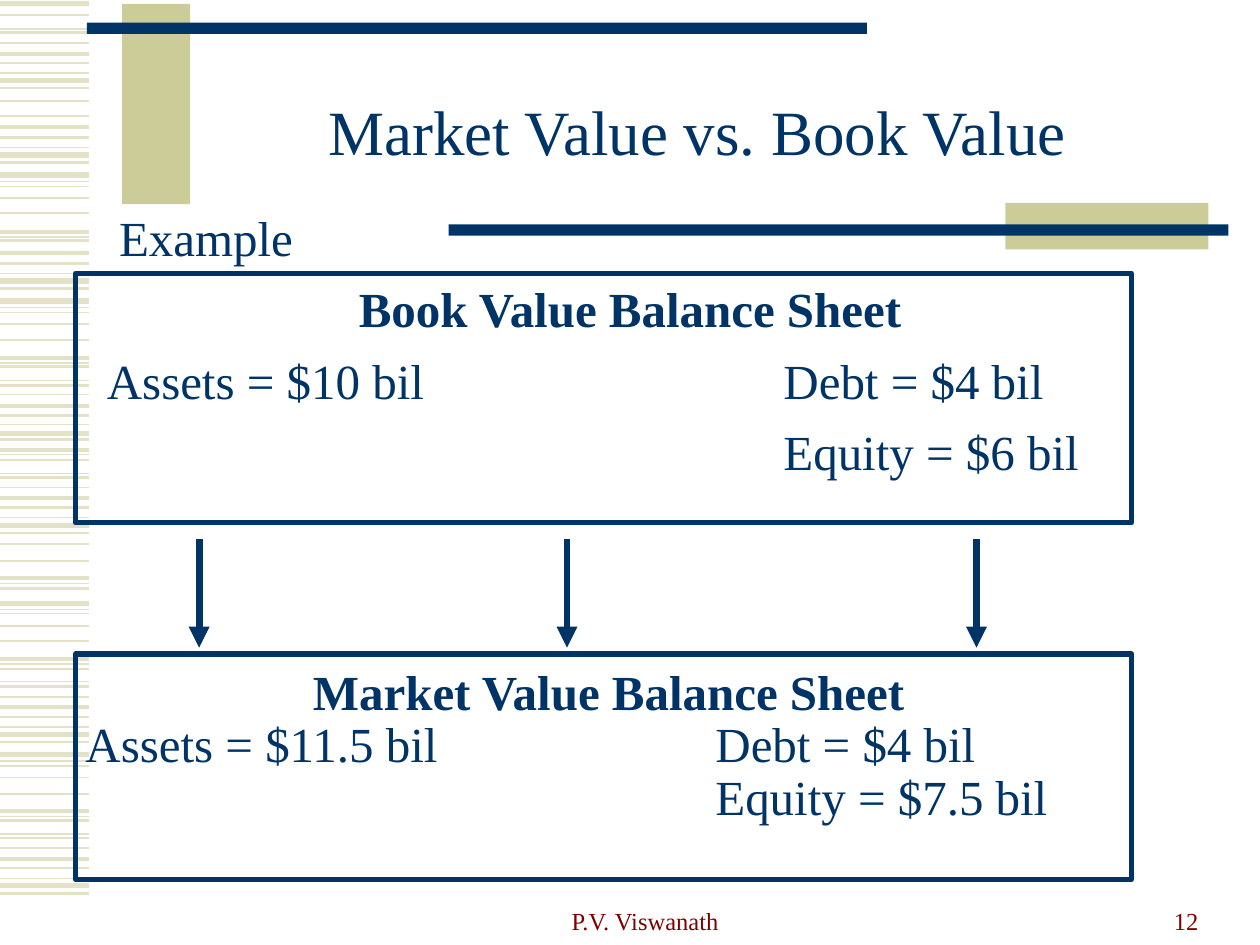
"""Build a slide comparing book value and market value balance sheets."""
import pptx
import pptx.dml.color
import pptx.enum.shapes
import pptx.enum.text
import pptx.util
from lxml import etree
from pptx.oxml.ns import qn

NAVY, SAND, PALE, MAROON = "003366", "CCCC99", "E3E2C7", "800000"
FONT = "Times New Roman"
ALIGN = pptx.enum.text.PP_ALIGN
ANCHOR = pptx.enum.text.MSO_ANCHOR

STRIPE_RIGHT = 0.71
STRIPES = {
    0.75: [0.23, 0.58, 1.17, 1.44, 1.88, 2.17, 2.44, 2.88, 3.02, 3.37, 3.61, 3.76,
           4.11, 4.63, 4.84, 5.27, 5.41, 5.77, 6.04, 6.48, 6.62, 6.97],
    1: [0.34, 0.8, 0.92, 1.48, 1.57, 1.69, 2.48, 2.57, 2.7, 3.13, 3.87, 4.32, 4.45,
        4.87, 4.97, 5.09, 5.53, 6.08, 6.17, 6.3, 6.73],
    1.5: [0.12, 0.26, 0.5, 0.7, 1.09, 1.29, 1.91, 2.09, 2.29, 2.91, 3.06, 3.3, 3.49,
          3.65, 3.79, 4.03, 4.23, 4.67, 5.31, 5.45, 5.69, 5.89, 6.51, 6.65, 6.89, 7.09],
    2.25: [0.43, 1.01, 1.84, 2.01, 2.84, 3.22, 3.57, 3.95, 4.59, 5.23, 5.61, 6.44, 6.82],
    3: [0.03, 0.64, 1.23, 1.39, 2.23, 2.39, 3.44, 4.17, 4.79, 5.83, 5.99, 7.03],
}
BARS = [
    ((0.97, 0.03, 0.54, 1.59), SAND),
    ((0.69, 0.18, 6.19, 0.09), NAVY),
    ((7.98, 1.61, 1.61, 0.37), SAND),
    ((3.56, 1.78, 6.19, 0.09), NAVY),
]
FRAMES = [(0.6, 2.17, 8.38, 1.98), (0.6, 5.19, 8.38, 1.79)]
ARROW_XS, ARROW_TOP, ARROW_BOTTOM = [1.58, 4.5, 7.75], 4.28, 5.14

TITLE = "Market Value vs. Book Value"
TITLE_BOX = (1.5, 0.67, 8.07, 0.83)
BOOK_BOX, BOOK_TAB, BOOK_TOP = (0.75, 1.33, 8.5, 3.33), 5.37, 0.32
BOOK = [
    (" Example", {}),
    ("Book Value Balance Sheet", {"bold": True, "align": ALIGN.CENTER}),
    ("Assets = $10 bil\tDebt = $4 bil", {}),
    ("\tEquity = $6 bil", {}),
]
MARKET_BOX, MARKET_TAB = (0.58, 5.25, 8.5, 1.67), 5
MARKET = [
    ("Market Value Balance Sheet", {"bold": True, "align": ALIGN.CENTER}),
    ("Assets = $11.5 bil\tDebt = $4 bil", {}),
    ("\tEquity = $7.5 bil", {}),
]
FOOTERS = [
    ("P.V. Viswanath", (3.43, 6.97, 3.38, 0.5), ALIGN.CENTER),
    ("12", (7.21, 6.97, 2.4, 0.5), ALIGN.RIGHT),
]


def inches(*values):
    return [pptx.util.Cm(v * 2.54) for v in values]


def rgb(color):
    return pptx.dml.color.RGBColor.from_string(color)


def write(tf, text, size=28, color=NAVY, bold=False, align=ALIGN.LEFT,
          spacing=None, before=0, tab=None):
    p = tf.paragraphs[0] if not tf.text else tf.add_paragraph()
    p.alignment, p.line_spacing = align, spacing
    p.space_before = pptx.util.Pt(before)
    if tab:
        tabs = etree.SubElement(p._p.get_or_add_pPr(), qn("a:tabLst"))
        etree.SubElement(tabs, qn("a:tab"), pos=str(inches(tab)[0]), algn="l")
    r = p.add_run()
    r.text = text
    r.font.name, r.font.size, r.font.bold = FONT, pptx.util.Pt(size), bold
    r.font.color.rgb = rgb(color)


def add_text_box(s, box, anchor=ANCHOR.TOP):
    tf = s.shapes.add_textbox(*inches(*box)).text_frame
    tf.word_wrap, tf.vertical_anchor = True, anchor
    return tf


def add_rect(s, box, fill=None, line=None):
    sp = s.shapes.add_shape(pptx.enum.shapes.MSO_SHAPE.RECTANGLE, *inches(*box))
    sp.shadow.inherit = False
    for part, color in ((sp.fill, fill), (sp.line.fill, line)):
        if color:
            part.solid()
            part.fore_color.rgb = rgb(color)
        else:
            part.background()
    if line:
        sp.line.width = pptx.util.Pt(3)


def add_line(s, ends, color, width, arrow=False):
    sp = s.shapes.add_connector(pptx.enum.shapes.MSO_CONNECTOR.STRAIGHT, *inches(*ends))
    sp.line.color.rgb = rgb(color)
    sp.line.width = pptx.util.Pt(width)
    if arrow:
        etree.SubElement(sp.line._get_or_add_ln(), qn("a:tailEnd"), type="triangle")
    etree.SubElement(sp._element.spPr, qn("a:effectLst"))


def main():
    prs = pptx.Presentation()
    prs.slide_width, prs.slide_height = inches(10, 7.5)
    s = prs.slides.add_slide(prs.slide_layouts[5])

    for width, ys in STRIPES.items():
        for y in ys:
            add_line(s, (0, y, STRIPE_RIGHT, y), PALE, width)
    for box, color in BARS:
        add_rect(s, box, fill=color)

    title = s.shapes.title
    title.left, title.top, title.width, title.height = inches(*TITLE_BOX)
    tf = title.text_frame
    tf.auto_size = pptx.enum.text.MSO_AUTO_SIZE.NONE
    tf.vertical_anchor = ANCHOR.MIDDLE
    write(tf, TITLE, size=36, align=ALIGN.CENTER, spacing=0.85)

    for text, box, align in FOOTERS:
        write(add_text_box(s, box, ANCHOR.BOTTOM), text, size=14, color=MAROON, align=align)

    tf = add_text_box(s, BOOK_BOX)
    tf.margin_top = inches(BOOK_TOP)[0]
    for i, (text, fmt) in enumerate(BOOK):
        write(tf, text, before=7 if i else 0, tab=BOOK_TAB, **fmt)

    for box in FRAMES:
        add_rect(s, box, line=NAVY)
    for x in ARROW_XS:
        add_line(s, (x, ARROW_TOP, x, ARROW_BOTTOM), NAVY, 4, arrow=True)

    tf = add_text_box(s, MARKET_BOX)
    for text, fmt in MARKET:
        write(tf, text, spacing=0.9, tab=MARKET_TAB, **fmt)

    prs.save("out.pptx")


if __name__ == "__main__":
    main()
